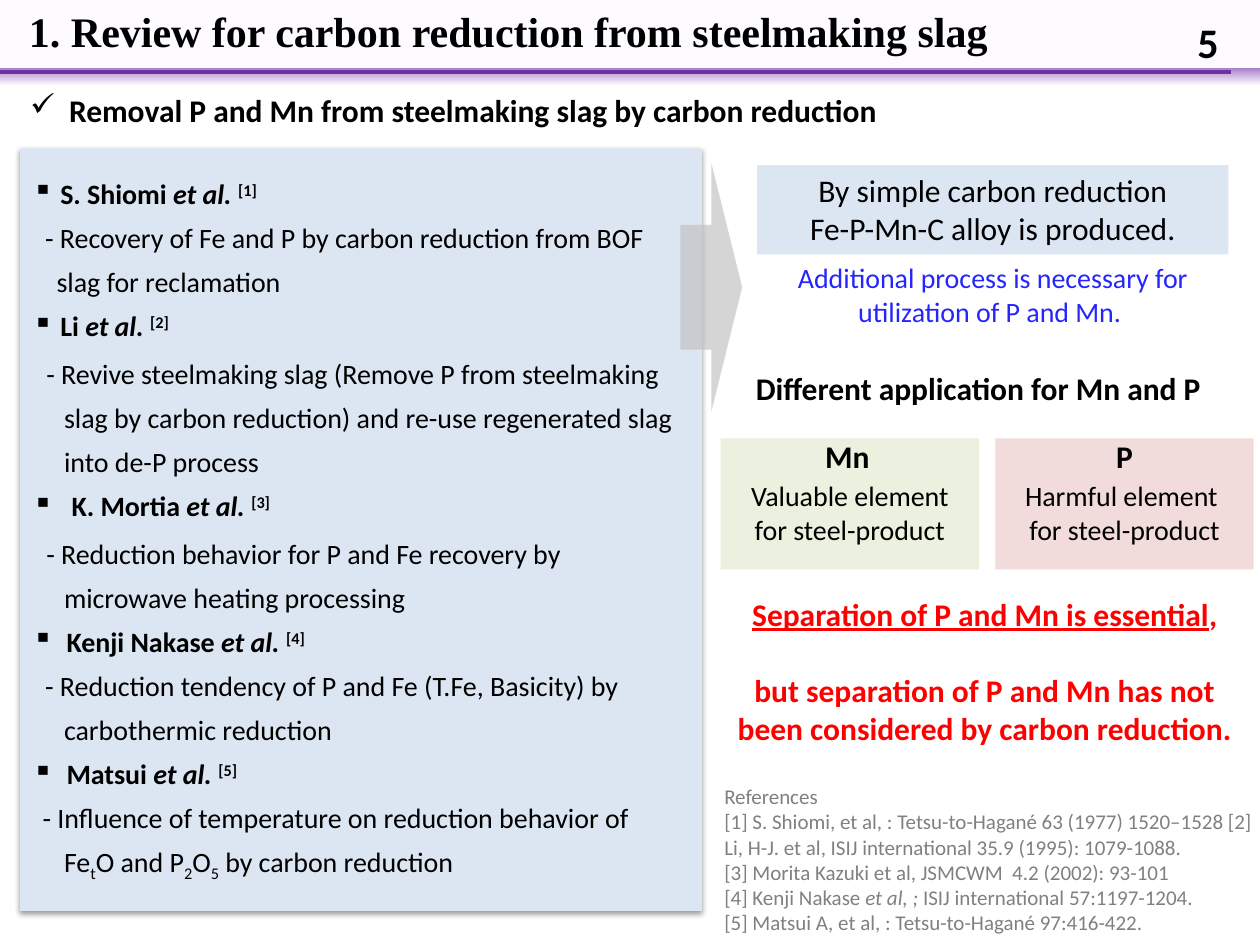
"""Build the slide on carbon reduction of steelmaking slag."""
from dataclasses import dataclass
from typing import NamedTuple

import pptx
import pptx.dml.color
import pptx.enum.shapes
import pptx.enum.text
import pptx.oxml.ns
import pptx.util
from lxml import etree

SCALE = 9144
KIND = pptx.enum.shapes.MSO_SHAPE
SIDE = pptx.enum.text.PP_ALIGN
ANCHOR = pptx.enum.text.MSO_ANCHOR
SHIFT = {"^": "30000", "_": "-25000"}


class Run(NamedTuple):
    """A stretch of text; style holds any of b, i, u, ^ and _."""
    text: str
    style: str = ""


@dataclass
class Line:
    """A paragraph with its indent in px and the space before it in points."""
    runs: list[Run]
    left: int = 0
    gap: int = 0
    mark: str = ""


@dataclass
class Box:
    """A text block, with a fill if it has one."""
    at: tuple[int, int, int, int]
    lines: list[Line]
    size: int = 18
    color: str = "000000"
    fill: str = ""
    kind: KIND = KIND.RECTANGLE
    side: SIDE = SIDE.CENTER
    anchor: ANCHOR = ANCHOR.TOP
    wrap: bool = True
    top: int = 5


def px(size: int) -> pptx.util.Emu:
    """Turn px into EMU."""
    return pptx.util.Emu(size * SCALE)


def tint(code: str) -> pptx.dml.color.RGBColor:
    """Turn a hex string into a colour."""
    return pptx.dml.color.RGBColor.from_string(code)


def node(owner, tag: str, **attrs: str):
    """Append a DrawingML element and return it."""
    return etree.SubElement(owner, pptx.oxml.ns.qn(tag), attrs)


def plain(text: str, style: str = "") -> Line:
    """Make a line of one run."""
    return Line([Run(text, style)])


def cite(name: str, ref: int, left: int) -> Line:
    """Make a bulleted heading for a cited study."""
    runs = [Run(name + " ", "b"), Run("et al. ", "bi"), Run(f"[{ref}]", "b^")]
    return Line(runs, left, 6, "▪")


def note(text: str, left: int, gap: int = 6) -> Line:
    """Make an indented line under a heading."""
    return Line([Run(text)], left, gap)


def write(frame, lines: list[Line], size: int, color: str, side, face: str = "Calibri") -> None:
    """Fill a text frame with styled lines."""
    for num, line in enumerate(lines):
        para = frame.add_paragraph() if num else frame.paragraphs[0]
        para.alignment = side
        para.space_before = pptx.util.Pt(line.gap)
        prop = para._p.get_or_add_pPr()
        prop.set("marL", str(px(line.left)))
        prop.set("indent", str(px(-line.left if line.mark else 0)))
        if line.mark:
            node(prop, "a:buChar", char=line.mark)
        for part in line.runs:
            run = para.add_run()
            run.text = part.text
            font = run.font
            font.name, font.size = face, pptx.util.Pt(size)
            font.color.rgb = tint(color)
            font.bold, font.italic = "b" in part.style, "i" in part.style
            font.underline = "u" in part.style
            for key in SHIFT.keys() & set(part.style):
                run._r.get_or_add_rPr().set("baseline", SHIFT[key])


def shape(slide, kind, at: tuple[int, int, int, int], fill: str):
    """Add a flat shape without outline."""
    item = slide.shapes.add_shape(kind, *map(px, at))
    item.shadow.inherit = False
    item.line.fill.background()
    item.fill.solid()
    item.fill.fore_color.rgb = tint(fill)
    return item


def block(slide, box: Box):
    """Add a text block and return its shape."""
    if box.fill:
        item = shape(slide, box.kind, box.at, box.fill)
    else:
        item = slide.shapes.add_textbox(*map(px, box.at))
    frame = item.text_frame
    frame.word_wrap = box.wrap
    frame.vertical_anchor = box.anchor
    frame.margin_top = px(box.top)
    write(frame, box.lines, box.size, box.color, box.side)
    return item


def header(slide) -> None:
    """Draw the title bar, its rule, the title and the page number."""
    band = shape(slide, KIND.RECTANGLE, (0, 54, 1000, 14), "FFFFFF")
    band.fill.gradient()
    band.fill.gradient_angle = 270
    for stop, code in zip(band.fill.gradient_stops, ("A77FCB", "FFFFFF")):
        stop.color.rgb = tint(code)
    shape(slide, KIND.RECTANGLE, (0, 0, 1000, 54), "FDFBFF")
    rule = slide.shapes.add_connector(
        pptx.enum.shapes.MSO_CONNECTOR.STRAIGHT, px(0), px(57), px(977), px(57))
    rule.line.color.rgb = tint("7030A0")
    rule.line.width = pptx.util.Pt(2)
    node(rule.element.spPr, "a:effectLst")
    title = slide.shapes.title
    title.left, title.top, title.width, title.height = map(px, (13, -1, 987, 51))
    frame = title.text_frame
    frame.auto_size = pptx.enum.text.MSO_AUTO_SIZE.NONE
    frame.word_wrap = False
    frame.vertical_anchor = ANCHOR.MIDDLE
    text = "1. Review for carbon reduction from steelmaking slag"
    write(frame, [plain(text, "b")], 24, "000000", SIDE.LEFT, "Times New Roman")
    slide.shapes.element.append(title.element)
    block(slide, Box((744, 13, 233, 40), [plain("5", "b")], 24,
                     side=SIDE.RIGHT, anchor=ANCHOR.MIDDLE))


def panel(slide) -> None:
    """Draw the panel of earlier studies with its arrow."""
    lines = [
        cite("S. Shiomi", 1, 22),
        note("- Recovery of Fe and P by carbon reduction from BOF", 10),
        note("slag for reclamation", 19),
        cite("Li", 2, 22),
        note("- Revive steelmaking slag (Remove P from steelmaking", 11, 8),
        note("slag by carbon reduction) and re-use regenerated slag", 25),
        note("into de-P process", 25),
        cite("K. Mortia", 3, 31),
        note("- Reduction behavior for P and Fe recovery by", 11, 8),
        note("microwave heating processing", 25),
        cite("Kenji Nakase", 4, 27),
        note("- Reduction tendency of P and Fe (T.Fe, Basicity) by", 10),
        note("carbothermic reduction", 25),
        cite("Matsui", 5, 27),
        note("- Influence of temperature on reduction behavior of", 8),
        Line([Run("Fe"), Run("t", "_"), Run("O and P"), Run("2", "_"), Run("O"),
              Run("5", "_"), Run(" by carbon reduction")], 25, 6),
    ]
    item = block(slide, Box((16, 118, 541, 605), lines, 16, fill="DCE6F2", side=SIDE.LEFT,
                            kind=KIND.DOWN_ARROW_CALLOUT, anchor=ANCHOR.MIDDLE))
    for num, value in enumerate((1.27, 1.01, 0, 1)):
        item.adjustments[num] = value
    glow = node(item.element.spPr.find(pptx.oxml.ns.qn("a:effectLst")), "a:outerShdw",
                blurRad="40000", dist="20000", dir="5400000", rotWithShape="0")
    node(node(glow, "a:srgbClr", val="000000"), "a:alpha", val="38000")
    arrow = shape(slide, KIND.RIGHT_ARROW, (540, 129, 49, 198), "BFBFBF")
    node(arrow.element.spPr.find(".//" + pptx.oxml.ns.qn("a:srgbClr")), "a:alpha", val="65000")


def main() -> None:
    """Build and save the slide."""
    deck = pptx.Presentation()
    deck.slide_width, deck.slide_height = px(1000), px(750)
    slide = deck.slides.add_slide(deck.slide_layouts[5])
    header(slide)
    topic = Line([Run("Removal P and Mn from steelmaking slag by carbon reduction", "b")],
                 31, 0, "✓")
    block(slide, Box((14, 67, 726, 40), [topic], side=SIDE.LEFT,
                     anchor=ANCHOR.MIDDLE, wrap=False))
    panel(slide)
    need = Line([Run("Separation of P and Mn is essential", "bu"), Run(",", "b")])
    lack = Line([Run("but separation of P and Mn has not been considered by carbon reduction.",
                     "b")], gap=22)
    refs = [
        plain("References"),
        plain("[1] S. Shiomi, et al, : Tetsu-to-Hagané 63 (1977) 1520–1528 [2] "
              "Li, H-J. et al, ISIJ international 35.9 (1995): 1079-1088."),
        plain("[3] Morita Kazuki et al, JSMCWM  4.2 (2002): 93-101"),
        Line([Run("[4] Kenji Nakase "), Run("et al, ; ", "i"),
              Run("ISIJ international 57:1197-1204.")]),
        plain("[5] Matsui A, et al, : Tetsu-to-Hagané 97:416-422."),
    ]
    good = [plain("Valuable element for steel-product")]
    bad = [plain("Harmful element "), plain("for steel-product")]
    for box in (
        Box((601, 131, 374, 71), [plain("By simple carbon reduction"),
                                  plain("Fe-P-Mn-C alloy is produced.")], fill="DCE6F2"),
        Box((574, 467, 415, 131), [need, lack], color="FF0000"),
        Box((565, 617, 440, 131), refs, 12, "808080", side=SIDE.LEFT),
        Box((572, 348, 205, 104), good, 16, fill="EBF1DE", top=32),
        Box((790, 348, 205, 104), bad, 16, fill="F2DCDB", top=32),
        Box((640, 342, 65, 40), [plain("Mn", "b")]),
        Box((865, 342, 55, 40), [plain("P", "b")]),
        Box((590, 288, 383, 40), [plain("Different application for Mn and P", "b")],
            side=SIDE.LEFT, wrap=False),
        Box((592, 202, 392, 64), [plain("Additional process is necessary for "
                                        "utilization of P and Mn. ")], 16, "2525FE"),
    ):
        block(slide, box)
    deck.save("out.pptx")


if __name__ == "__main__":
    main()
